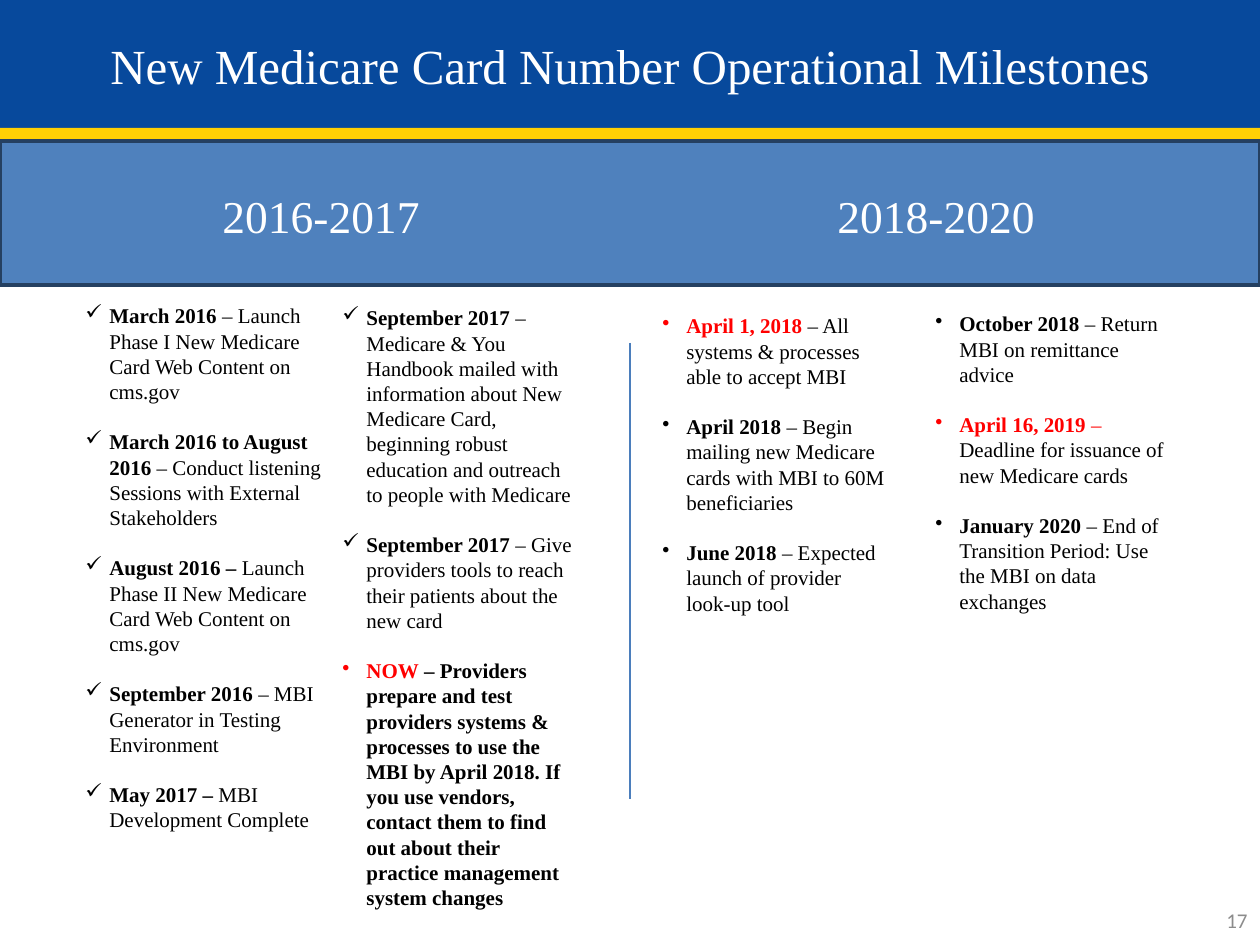
from lxml.etree import SubElement
from pptx import Presentation
from pptx.dml.color import RGBColor
from pptx.enum.shapes import MSO_CONNECTOR, MSO_SHAPE
from pptx.enum.text import MSO_ANCHOR, PP_ALIGN
from pptx.oxml.ns import qn
from pptx.util import Pt

PX = 914400 / 126
SERIF = "Times New Roman"
HEX = {"navy": "07499C", "gold": "FFD004", "band": "4F81BD", "edge": "254061",
       "rule": "4B7EBC", "white": "FFFFFF", "black": "000000",
       "red": "FF0000", "gray": "8C8C8C"}
RGB = {name: RGBColor.from_string(code) for name, code in HEX.items()}


def emu(*sizes):
    return [round(size * PX) for size in sizes]


def style(run, size, color, name=SERIF, bold=False):
    font = run.font
    font.size, font.name, font.bold = Pt(size), name, bold
    font.color.rgb = RGB[color]


deck = Presentation()
deck.slide_width, deck.slide_height = emu(1260, 945)
slide = deck.slides.add_slide(deck.slide_layouts[5])
shapes = slide.shapes

# Header bars and the period band
for top, high, fill, edge in [(0, 128, "navy", None), (128, 12, "gold", None),
                              (141, 144, "band", "edge")]:
    bar = shapes.add_shape(MSO_SHAPE.RECTANGLE, *emu(0, top, 1260, high))
    bar.shadow.inherit = False
    bar.fill.solid()
    bar.fill.fore_color.rgb = RGB[fill]
    if edge:
        bar.line.color.rgb = RGB[edge]
        bar.line.width = Pt(2)
    else:
        bar.line.fill.background()

# Title, raised above the bars
title = shapes.title
shapes._spTree.append(title._element)
title.left, title.top, title.width, title.height = emu(0, 35, 1260, 59)
frame = title.text_frame
frame.text = "New Medicare Card Number Operational Milestones"
frame.margin_left = frame.margin_right = 0
frame.margin_top = frame.margin_bottom = 0
frame.vertical_anchor = MSO_ANCHOR.TOP
frame.paragraphs[0].alignment = PP_ALIGN.CENTER
style(frame.paragraphs[0].runs[0], 28, "white")

# Period labels and page number
for text, box, size, color, name, align in [
    ("2016-2017", (210, 181, 224, 68), 26, "white", SERIF, PP_ALIGN.LEFT),
    ("2018-2020", (825, 181, 224, 68), 26, "white", SERIF, PP_ALIGN.LEFT),
    ("17", (966, 895, 294, 50), 12, "gray", "Calibri", PP_ALIGN.RIGHT),
]:
    frame = shapes.add_textbox(*emu(*box)).text_frame
    frame.text = text
    frame.vertical_anchor = MSO_ANCHOR.MIDDLE
    frame.paragraphs[0].alignment = align
    style(frame.paragraphs[0].runs[0], size, color, name)

# Divider between the periods
x, top, end = emu(630, 343, 799)
rule = shapes.add_connector(MSO_CONNECTOR.STRAIGHT, x, top, x, end)
rule.line.color.rgb = RGB["rule"]
rule.line.width = Pt(0.75)
SubElement(rule._element.spPr, qn("a:effectLst"))

# Milestones: box, top inset, then bullet and runs of (text, color, bold)
columns = [
    ((73, 273, 263, 619), 30, [
        ("✓", ("March 2016 ", "black", True),
         ("– Launch Phase I New Medicare Card Web Content on cms.gov", "black", False)),
        ("✓", ("March 2016 to August 2016 ", "black", True),
         ("– Conduct listening Sessions with External Stakeholders", "black", False)),
        ("✓", ("August 2016 – ", "black", True),
         ("Launch Phase II New Medicare Card Web Content on cms.gov", "black", False)),
        ("✓", ("September 2016 ", "black", True),
         ("– MBI Generator in Testing Environment", "black", False)),
        ("✓", ("May 2017 – ", "black", True),
         ("MBI Development Complete", "black", False)),
    ]),
    ((330, 273, 256, 674), 32, [
        ("✓", ("September 2017 ", "black", True),
         ("– Medicare & You Handbook mailed with information about New Medicare "
          "Card, beginning robust education and outreach to people with Medicare",
          "black", False)),
        ("✓", ("September 2017 ", "black", True),
         ("– Give providers tools to reach their patients about the new card",
          "black", False)),
        ("•", ("NOW", "red", True),
         (" – Providers prepare and test providers systems & processes to use the "
          "MBI by April 2018. If you use vendors, contact them to find out about "
          "their practice management system changes", "black", True)),
    ]),
    ((650, 283, 252, 491), 30, [
        ("•", ("April 1, 2018 ", "red", True),
         ("– All systems & processes able to accept MBI", "black", False)),
        ("•", ("April 2018 ", "black", True),
         ("– Begin mailing new Medicare cards with MBI to 60M beneficiaries",
          "black", False)),
        ("•", ("June 2018 ", "black", True),
         ("– Expected launch of provider look-up tool", "black", False)),
    ]),
    ((923, 305, 263, 318), 6, [
        ("•", ("October 2018 ", "black", True),
         ("– Return MBI on remittance advice", "black", False)),
        ("•", ("April 16, 2019 ", "red", True), ("– ", "red", False),
         ("Deadline for issuance of new Medicare cards", "black", False)),
        ("•", ("January 2020 ", "black", True),
         ("– End of Transition Period: Use the MBI on data exchanges",
          "black", False)),
    ]),
]
indent, = emu(24)
for box, inset, items in columns:
    frame = shapes.add_textbox(*emu(*box)).text_frame
    frame.word_wrap = True
    frame.margin_top, = emu(inset)
    for i, (mark, *runs) in enumerate(items):
        para = frame.add_paragraph() if i else frame.paragraphs[0]
        para.line_spacing = Pt(14.4)
        if i:
            para.space_before = Pt(14.4)
        props = para._p.get_or_add_pPr()
        props.set("marL", str(indent))
        props.set("indent", str(-indent))
        SubElement(props, qn("a:buChar"), char=mark)
        for text, color, bold in runs:
            run = para.add_run()
            run.text = text
            style(run, 12, color, bold=bold)

deck.save("out.pptx")
